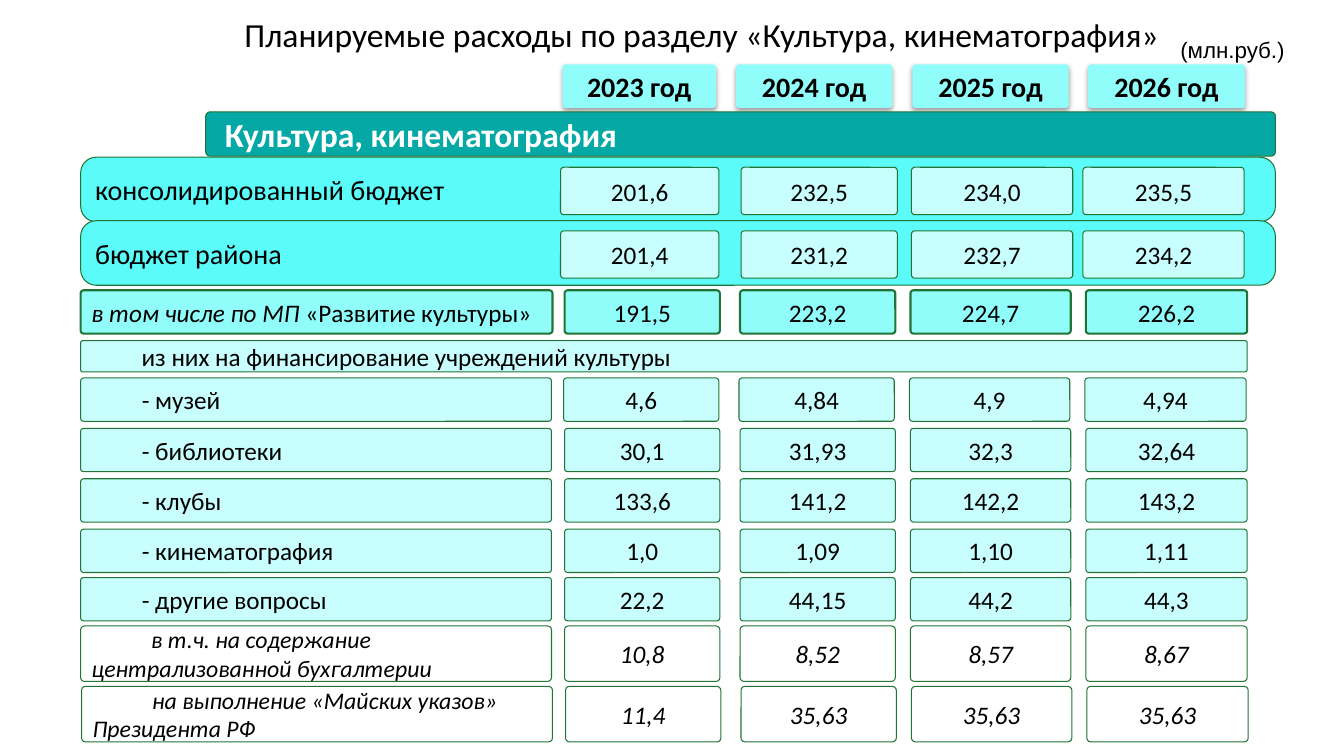
from lxml.etree import SubElement
from pptx import Presentation
from pptx.dml.color import RGBColor
from pptx.enum.shapes import MSO_SHAPE as Preset
from pptx.enum.text import MSO_ANCHOR as Anchor, PP_ALIGN as Align
from pptx.oxml.ns import qn
from pptx.util import Inches, Pt

COLORS = {
    "text": "000000", "white": "FFFFFF", "border": "217436", "heading": "04A8A4",
    "budget": "5AFBF8", "program": "91FDFA", "cell": "C8FEFD",
}
YEARS = ["2023 год", "2024 год", "2025 год", "2026 год"]
# Left edge and width of each year column
HEADER_COLUMNS = [(5.58, 1.52), (7.3, 1.55), (9.05, 1.55), (10.79, 1.56)]
BUDGET_COLUMNS = [(5.56, 1.57), (7.35, 1.55), (9.04, 1.6), (10.74, 1.6)]
DETAIL_COLUMNS = [(5.6, 1.54), (7.34, 1.54), (9.03, 1.59), (10.77, 1.6)]

BUDGETS = [
    (1.56, "консолидированный бюджет", ["201,6", "232,5", "234,0", "235,5"]),
    (2.19, "бюджет района", ["201,4", "231,2", "232,7", "234,2"]),
]
# Top, shift of the row to the right, label, values
INSTITUTIONS = [
    (3.75, -0.01, "- музей", ["4,6", "4,84", "4,9", "4,94"]),
    (4.25, 0, "- библиотеки", ["30,1", "31,93", "32,3", "32,64"]),
    (4.75, 0, "- клубы", ["133,6", "141,2", "142,2", "143,2"]),
    (5.25, 0, "- кинематография", ["1,0", "1,09", "1,10", "1,11"]),
    (5.73, 0, "- другие вопросы", ["22,2", "44,15", "44,2", "44,3"]),
]
DETAILS = [
    (6.21, 0, "в т.ч. на содержание централизованной бухгалтерии",
     ["10,8", "8,52", "8,57", "8,67"]),
    (6.81, 0.01, "на выполнение «Майских указов» Президента РФ",
     ["11,4", "35,63", "35,63", "35,63"]),
]


def rgb(name):
    return RGBColor.from_string(COLORS[name])


def style_text(para, size, color="text", bold=False, italic=False, font="Calibri"):
    para.font.name = font
    para.font.size = Pt(size)
    para.font.bold = bold
    para.font.italic = italic
    para.font.color.rgb = rgb(color)


def add_bar(page, box, text, fill, size=18, align=Align.LEFT, color="text", bold=False,
            italic=False, border=0.75, corner=0.07, margin=0, first_line=0):
    """Rounded bar with one paragraph; border 0 means no outline."""
    bar = page.shapes.add_shape(Preset.ROUNDED_RECTANGLE, *map(Inches, box))
    bar.adjustments[0] = corner
    bar.shadow.inherit = False
    bar.fill.solid()
    bar.fill.fore_color.rgb = rgb(fill)
    if border:
        bar.line.color.rgb = rgb("border")
        bar.line.width = Pt(border)
    else:
        bar.line.fill.background()
    frame = bar.text_frame
    frame.word_wrap = True
    frame.vertical_anchor = Anchor.MIDDLE
    para = frame.paragraphs[0]
    para.text = text
    para.alignment = align
    style_text(para, size, color, bold, italic)
    properties = para._p.get_or_add_pPr()
    properties.set("marL", str(Inches(margin)))
    properties.set("indent", str(Inches(first_line)))
    return bar


def add_shadow(shape):
    effects = shape._element.spPr.find(qn("a:effectLst"))
    shadow = SubElement(effects, qn("a:outerShdw"), blurRad=str(Pt(4)), dist=str(Pt(2)),
                        dir="5400000", algn="t", rotWithShape="0")
    tint = SubElement(shadow, qn("a:srgbClr"), val=COLORS["text"])
    SubElement(tint, qn("a:alpha"), val="38000")


def add_values(page, columns, top, height, values, fill, shift=0, **style):
    """One bar per year column; returns the bars."""
    return [add_bar(page, (left + shift, top, width, height), value, fill,
                    align=Align.CENTER, **style)
            for (left, width), value in zip(columns, values)]


def add_caption(page, box, text, size, font, wrap):
    caption = page.shapes.add_textbox(*map(Inches, box))
    caption.text_frame.word_wrap = wrap
    para = caption.text_frame.paragraphs[0]
    para.text = text
    para.alignment = Align.CENTER
    style_text(para, size, font=font)


def add_header(page, top):
    add_caption(page, (2.28, top, 9.36, 0.51),
                "Планируемые расходы по разделу «Культура, кинематография»", 24, "Calibri", False)
    add_caption(page, (11.31, top + 0.22, 1.83, 0.37), "(млн.руб.)", 16, "Arial", True)
    for bar in add_values(page, HEADER_COLUMNS, top + 0.55, 0.43, YEARS, "program",
                          size=20, bold=True, border=0):
        add_shadow(bar)
    add_bar(page, (2.04, top + 1.02, 10.61, 0.44), "Культура, кинематография", "heading",
            size=24, color="white", bold=True, corner=0.1, margin=0.08)


def add_budget_row(page, top, label, values):
    add_bar(page, (0.8, top, 11.85, 0.64), label, "budget", size=20, corner=0.24)
    add_values(page, BUDGET_COLUMNS, top + 0.1, 0.47, values, "cell")


def add_program_row(page, top):
    label = add_bar(page, (0.8, top, 4.68, 0.43), "", "program", border=1.5)
    para = label.text_frame.paragraphs[0]
    for text, italic in [("в том числе по МП ", True), ("«Развитие культуры»", False)]:
        span = para.add_run()
        span.text = text
        span.font.italic = italic
    add_values(page, DETAIL_COLUMNS, top, 0.43, ["191,5", "223,2", "224,7", "226,2"],
               "program", border=1.5)


def add_institution_row(page, top, shift, label, values):
    add_bar(page, (0.8, top, 4.67, 0.43), label, "cell", margin=0.5)
    add_values(page, DETAIL_COLUMNS, top, 0.43, values, "cell", shift)


def add_detail_row(page, top, shift, label, values):
    add_bar(page, (0.8 + shift, top, 4.67, 0.55), label, "white", size=17,
            italic=True, first_line=0.59)
    add_values(page, DETAIL_COLUMNS, top, 0.55, values, "white", shift, italic=True)


def main():
    deck = Presentation()
    deck.slide_width, deck.slide_height = Inches(13.33), Inches(7.5)
    page = deck.slides.add_slide(deck.slide_layouts[6])
    add_header(page, 0.09)
    for row in BUDGETS:
        add_budget_row(page, *row)
    add_program_row(page, 2.88)
    add_bar(page, (0.8, 3.38, 11.57, 0.31), "из них на финансирование учреждений культуры",
            "cell", margin=0.5)
    for row in INSTITUTIONS:
        add_institution_row(page, *row)
    for row in DETAILS:
        add_detail_row(page, *row)
    deck.save("out.pptx")


if __name__ == "__main__":
    main()
